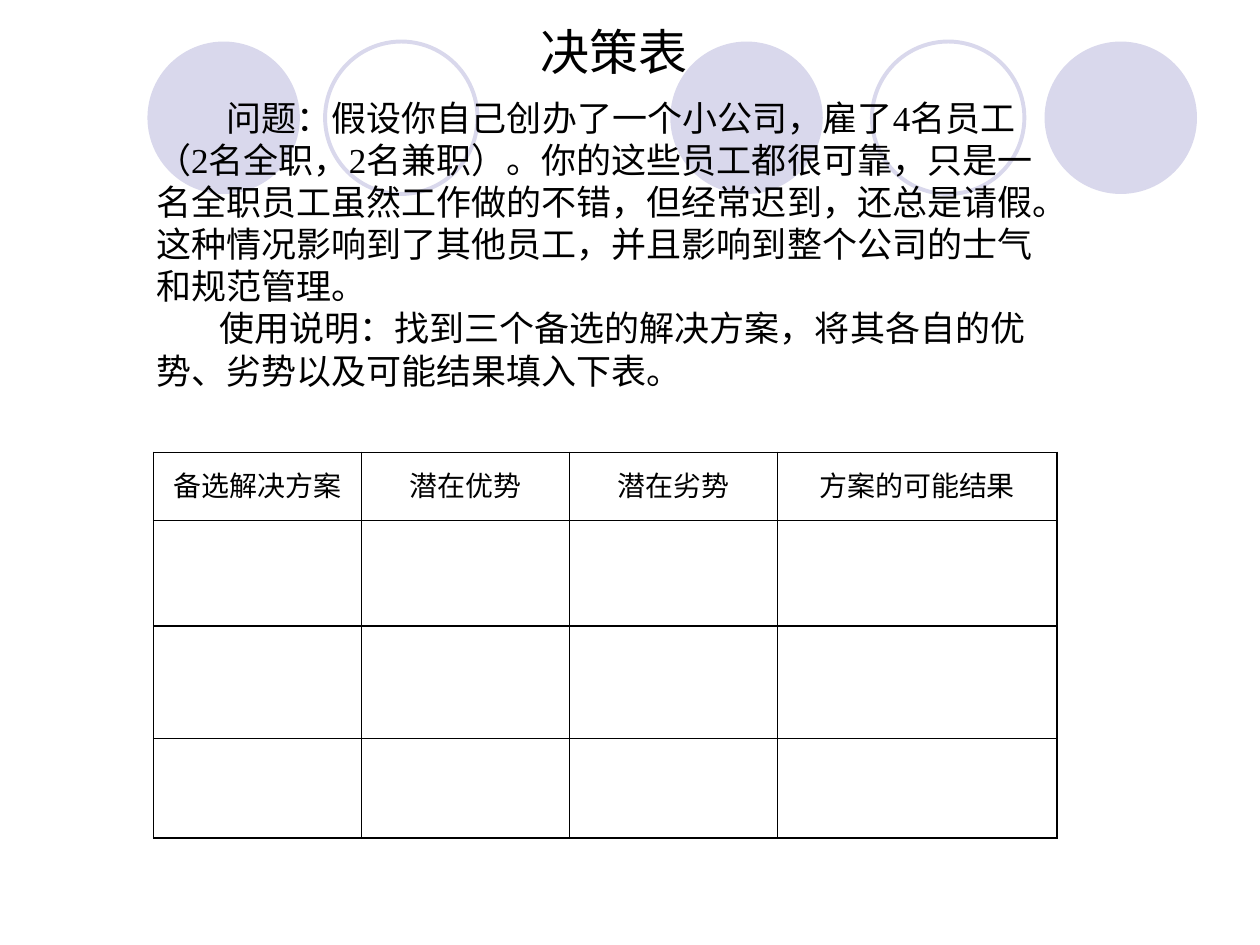
from lxml.etree import SubElement
from pptx import Presentation
from pptx.dml.color import RGBColor
from pptx.enum.shapes import MSO_SHAPE as Shape
from pptx.enum.text import MSO_ANCHOR as Anchor, PP_ALIGN as Align
from pptx.oxml.ns import qn
from pptx.util import Inches, Pt

COLORS = {"ink": "000000", "lavender": "D9D8EC"}
FONT = "Times New Roman"
TITLE = "决策表"
BODY = [
    ("问题：假设你自己创办了一个小公司，雇了4名员工（2名全职，2名兼职）。"
     "你的这些员工都很可靠，只是一名全职员工虽然工作做的不错，但经常迟到，还总是请假。"
     "这种情况影响到了其他员工，并且影响到整个公司的士气和规范管理。", 0.56),
    ("使用说明：找到三个备选的解决方案，将其各自的优势、劣势以及可能结果填入下表。", 0.5),
]
HEADERS = ["备选解决方案", "潜在优势", "潜在劣势", "方案的可能结果"]
COLUMN_WIDTHS = [1.65, 1.65, 1.65, 2.22]
ROW_HEIGHTS = [0.54, 0.84, 0.89, 0.79]
CIRCLES = [(1.17, True), (2.58, False), (5.32, True), (6.92, False), (8.29, True)]


def color(name):
    return RGBColor.from_string(COLORS[name])


def write(para, text, size=20, align=Align.LEFT, indent=0):
    """Fill a paragraph with one formatted span."""
    para.alignment = align
    if indent:
        props = para._p.get_or_add_pPr()
        props.set("marL", "0")
        props.set("indent", str(Inches(indent)))
    span = para.add_run()
    span.text = text
    span.font.name = FONT
    span.font.size = Pt(size)
    span.font.color.rgb = color("ink")


def add_circle(page, left, filled):
    circle = page.shapes.add_shape(
        Shape.OVAL, Inches(left), Inches(0.33), Inches(1.21), Inches(1.21))
    circle.shadow.inherit = False
    if filled:
        circle.fill.solid()
        circle.fill.fore_color.rgb = color("lavender")
        circle.line.fill.background()
    else:
        circle.fill.background()
        circle.line.color.rgb = color("lavender")
        circle.line.width = Pt(2.25)


def place_title(page):
    title = page.shapes.title
    title.left, title.top = Inches(1.14), Inches(0.12)
    title.width, title.height = Inches(7.17), Inches(0.57)
    title.text_frame.vertical_anchor = Anchor.MIDDLE
    write(title.text_frame.paragraphs[0], TITLE, size=28, align=Align.CENTER, indent=0.3)
    # Bring the title in front of the circles
    page.shapes._spTree.append(title._element)


def add_body(page):
    box = page.shapes.add_textbox(Inches(1.14), Inches(0.72), Inches(7.17), Inches(2.43))
    frame = box.text_frame
    frame.word_wrap = True
    for index, (text, indent) in enumerate(BODY):
        para = frame.add_paragraph() if index else frame.paragraphs[0]
        write(para, text, indent=indent)


def set_borders(cell):
    props = cell._tc.get_or_add_tcPr()
    for position, side in enumerate(("lnL", "lnR", "lnT", "lnB")):
        line = props.makeelement(qn(f"a:{side}"), {"w": str(Pt(1))})
        fill = SubElement(line, qn("a:solidFill"))
        SubElement(fill, qn("a:srgbClr"), val=COLORS["ink"])
        props.insert(position, line)


def add_decision_table(page):
    table = page.shapes.add_table(
        len(ROW_HEIGHTS), len(COLUMN_WIDTHS), Inches(1.22), Inches(3.59),
        Inches(sum(COLUMN_WIDTHS)), Inches(sum(ROW_HEIGHTS))).table
    table.first_row = table.horz_banding = False
    for column, width in zip(table.columns, COLUMN_WIDTHS):
        column.width = Inches(width)
    for row, height in zip(table.rows, ROW_HEIGHTS):
        row.height = Inches(height)
    for cell in table.iter_cells():
        cell.fill.background()
        set_borders(cell)
    for column, text in enumerate(HEADERS):
        cell = table.cell(0, column)
        cell.margin_top = Inches(0.09)
        write(cell.text_frame.paragraphs[0], text, size=16, align=Align.CENTER)


def main():
    deck = Presentation()
    deck.slide_width, deck.slide_height = Inches(10), Inches(7.5)
    page = deck.slides.add_slide(deck.slide_layouts[5])
    # Background circles
    for left, filled in CIRCLES:
        add_circle(page, left, filled)
    # Title, problem text and table
    place_title(page)
    add_body(page)
    add_decision_table(page)
    deck.save("out.pptx")


if __name__ == "__main__":
    main()
